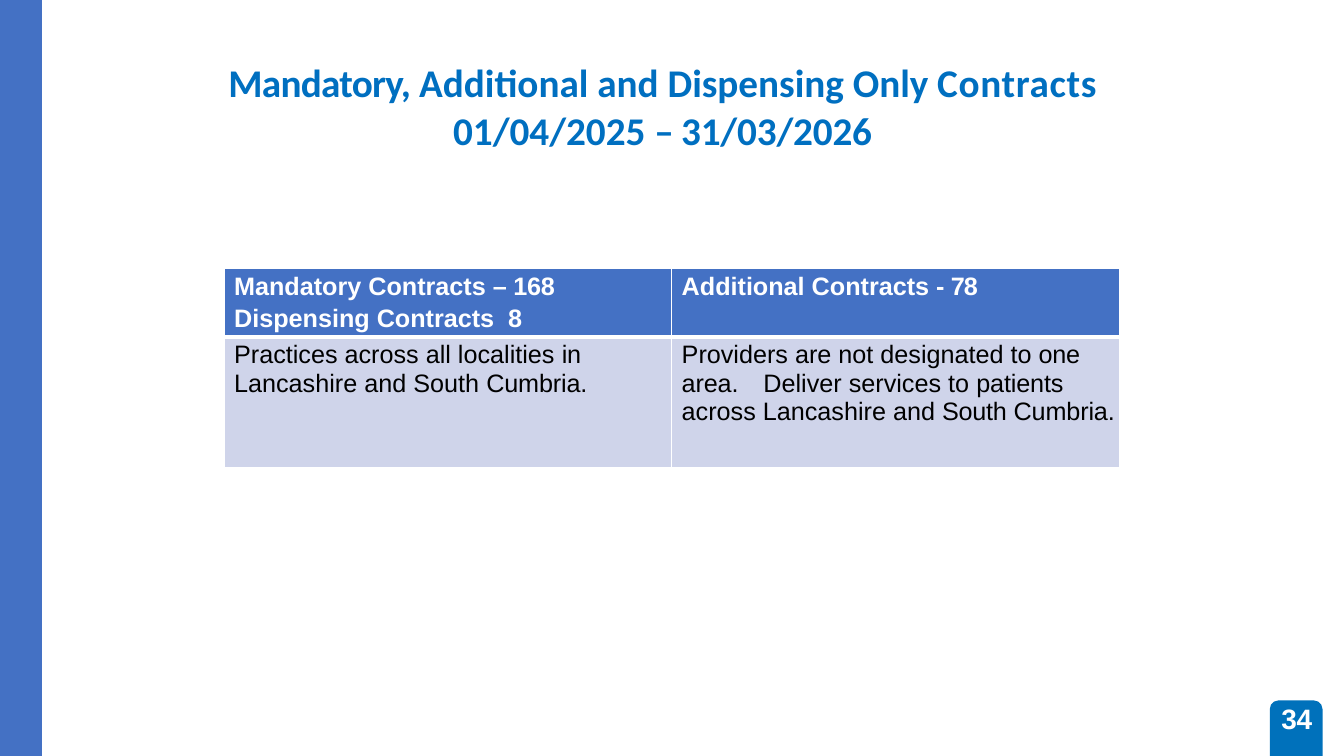
from dataclasses import dataclass
from lxml import etree
from pptx import Presentation
from pptx.dml.color import RGBColor
from pptx.enum.shapes import MSO_SHAPE
from pptx.enum.text import PP_ALIGN
from pptx.oxml.ns import qn
from pptx.util import Cm, Pt

BAR, TAB = MSO_SHAPE.RECTANGLE, MSO_SHAPE.ROUND_2_SAME_RECTANGLE
LEFT, CENTER = PP_ALIGN.LEFT, PP_ALIGN.CENTER

TITLE = [
    [("Mandatory, ", -0.5), ("Additional and Dispensing Only ", 0), ("Contracts", 0.5)],
    [("01/04/2025 ", 0), ("– ", -1.1), ("31/03/2026", -0.1)],
]
HEADS = [
    [[("Mandatory Contracts", 0), (" – 168", -0.2)], [("Dispensing Contracts  8", 0)]],
    [[("Additional Contracts -", 0), (" 78", -0.7)]],
]
NOTES = [
    [[("Practices across all localities ", 0), ("in", -0.2)],
     [("Lancashire and South ", 0), ("Cumbria.", -0.1)]],
    [[("Providers are not designated to", 0), (" one ", -0.2), ("area.", -0.1),
      ("\tDeliver services to ", 0), ("patients ", -0.1),
      ("across Lancashire and ", 0), ("South ", -0.2), ("Cumbria.", -0.1)]],
]
PAGE = [[("34", -0.2)]]


@dataclass(frozen=True)
class Theme:
    bar: str = "4471C4"
    tab: str = "0071BB"
    title: str = "006FC0"
    pale: str = "CFD4EA"
    white: str = "FFFFFF"
    black: str = "000000"
    head: str = "Calibri"
    body: str = "Arial"
    big: int = 28
    mid: int = 20
    small: int = 18


T = Theme()


def write(frame, paras, font, size, color, bold=True, align=LEFT, indent=0, gap=0, top=0):
    frame.word_wrap = True
    frame.margin_left = frame.margin_right = frame.margin_bottom = 0
    frame.margin_top = Cm(top)
    for i, runs in enumerate(paras):
        para = frame.add_paragraph() if i else frame.paragraphs[0]
        para.alignment = align
        props = para._p.get_or_add_pPr()
        props.set("marL", str(Cm(indent)))
        if i:
            para.space_before = Pt(gap)
        if any("\t" in text for text, _ in runs):
            tabs = etree.SubElement(props, qn("a:tabLst"))
            etree.SubElement(tabs, qn("a:tab"), pos=str(Cm(2.06)), algn="l")
        for text, space in runs:
            run = para.add_run()
            run.text = text
            run.font.name, run.font.size, run.font.bold = font, Pt(size), bold
            run.font.color.rgb = RGBColor.from_string(color)
            run._r.get_or_add_rPr().set("spc", str(round(space * 100)))


def block(slide, kind, box, color):
    shape = slide.shapes.add_shape(kind, *map(Cm, box))
    shape.shadow.inherit = False
    shape.fill.solid()
    shape.fill.fore_color.rgb = RGBColor.from_string(color)
    shape.line.fill.background()


def label(slide, box, paras, *style, **more):
    frame = slide.shapes.add_textbox(*map(Cm, box)).text_frame
    write(frame, paras, *style, **more)
    return frame


def border(cell, widths):
    props = cell._tc.get_or_add_tcPr()
    for i, (side, width) in enumerate(zip("LRTB", widths)):
        line = etree.Element(qn("a:ln" + side), w=str(Pt(width)))
        fill = etree.SubElement(line, qn("a:solidFill"))
        etree.SubElement(fill, qn("a:srgbClr"), val=T.white)
        props.insert(i, line)


def grid(slide):
    rows = [
        (HEADS, 1.73, T.bar, T.white, True, (1, 1, 1, 3)),
        (NOTES, 3.3, T.pale, T.black, False, (1, 1, 3, 1)),
    ]
    high = sum(row[1] for row in rows)
    table = slide.shapes.add_table(2, 2, Cm(5.65), Cm(6.76), Cm(22.56), Cm(high)).table
    for r, (cells, tall, fill, color, bold, widths) in enumerate(rows):
        table.rows[r].height = Cm(tall)
        for c, paras in enumerate(cells):
            cell = table.cell(r, c)
            cell.fill.solid()
            cell.fill.fore_color.rgb = RGBColor.from_string(fill)
            cell.margin_left = cell.margin_right = cell.margin_bottom = 0
            cell.margin_top = Cm(0.1)
            write(cell.text_frame, paras, T.body, T.small, color, bold,
                  indent=0.25, gap=3.1 if bold else 0, top=0.1)
            border(cell, widths)


def main():
    deck = Presentation()
    deck.slide_width, deck.slide_height = Cm(33.87), Cm(19.05)
    slide = deck.slides.add_slide(deck.slide_layouts[6])
    block(slide, TAB, (32, 17.65, 1.33, 1.4), T.tab)
    block(slide, BAR, (0, 0, 1.06, 19.05), T.bar)
    label(slide, (5.65, 1.45, 22.1, 3.63), TITLE, T.head, T.big, T.title,
          align=CENTER, gap=0.2, top=0.03)
    page = label(slide, (32.16, 17.7, 1.07, 0.94), PAGE, T.body, T.mid, T.white, indent=0.13)
    page.paragraphs[0].line_spacing = Pt(23.1)
    grid(slide)
    deck.save("out.pptx")


if __name__ == "__main__":
    main()
